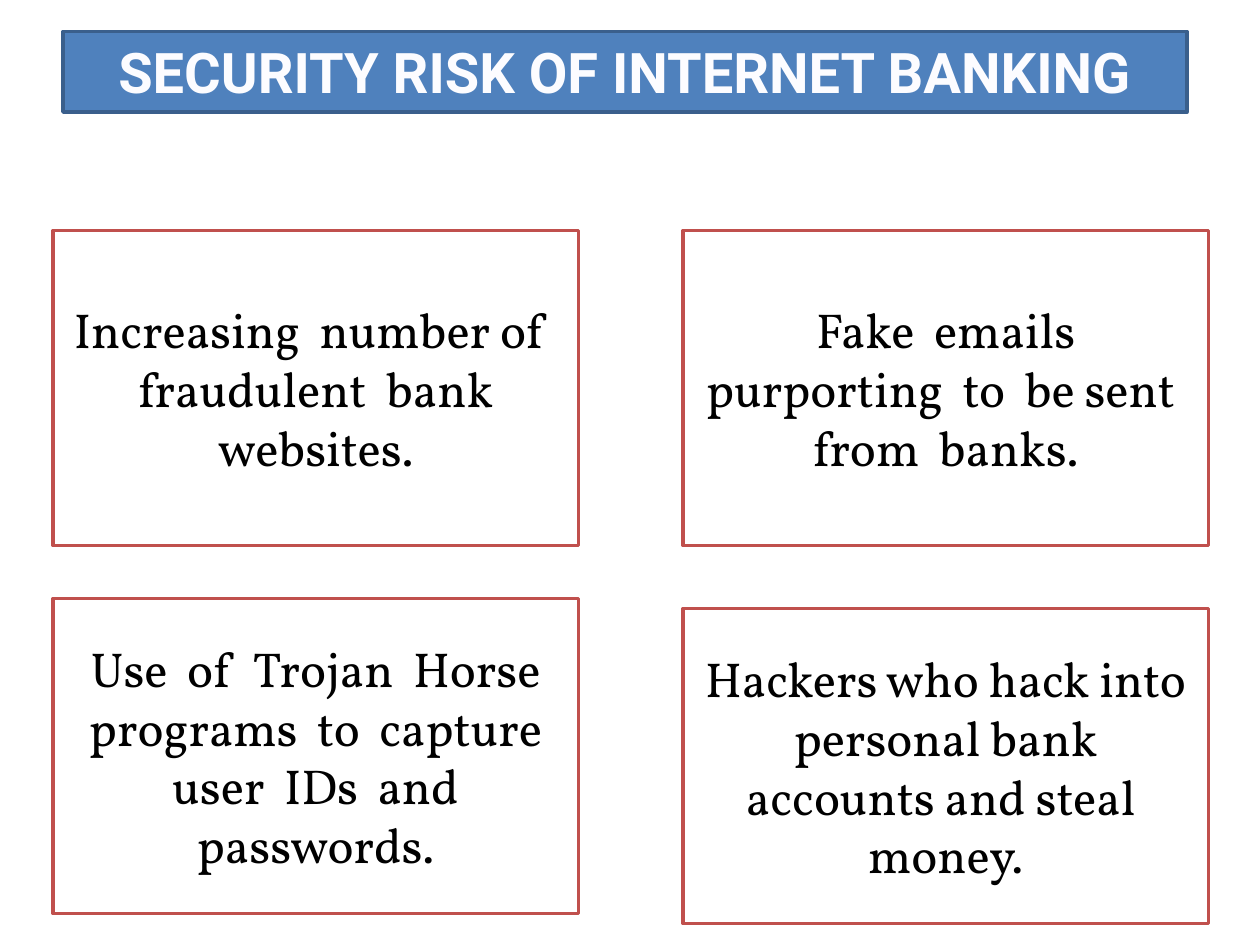
from pptx import Presentation
from pptx.dml.color import RGBColor
from pptx.enum.shapes import MSO_SHAPE
from pptx.enum.text import MSO_ANCHOR, MSO_AUTO_SIZE, PP_ALIGN
from pptx.util import Inches, Pt

RECT = MSO_SHAPE.RECTANGLE
TOP, MIDDLE = MSO_ANCHOR.TOP, MSO_ANCHOR.MIDDLE
CENTER = PP_ALIGN.CENTER
GROW = MSO_AUTO_SIZE.SHAPE_TO_FIT_TEXT

BLUE = RGBColor(0x4F, 0x81, 0xBD)
NAVY = RGBColor(0x3A, 0x5F, 0x8C)
RED = RGBColor(0xC0, 0x50, 0x4D)
WHITE = RGBColor(0xFF, 0xFF, 0xFF)
PALE = RGBColor(0xFC, 0xFC, 0xFF)
BLACK = RGBColor(0x00, 0x00, 0x00)

deck = Presentation()
deck.slide_width, deck.slide_height = Inches(10), Inches(7.5)
slide = deck.slides.add_slide(deck.slide_layouts[6])


def add_box(area, text, fill, edge, face, size, ink, anchor):
    box = slide.shapes.add_shape(RECT, *[Inches(n) for n in area])
    box.shadow.inherit = False
    box.fill.solid()
    box.fill.fore_color.rgb = fill
    box.line.color.rgb = edge
    box.line.width = Pt(2)
    frame = box.text_frame
    frame.word_wrap = True
    frame.vertical_anchor = anchor
    para = frame.paragraphs[0]
    para.text = text
    para.alignment = CENTER
    para.font.name = face
    para.font.size = Pt(size)
    para.font.color.rgb = ink
    return box


# Title banner
title = add_box((0.5, 0.25, 8.92, 0.64), "SECURITY RISK OF INTERNET BANKING",
                BLUE, NAVY, "Roboto", 32, PALE, TOP)
title.text_frame.auto_size = GROW
title.text_frame.paragraphs[0].font.bold = True

# Risk cards: two columns, the last card set slightly lower
LEFT, STEP = 0.42, 5
WIDE, HIGH = 4.17, 2.5
cards = [
    (0, 1.83, "Increasing  number of  fraudulent  bank websites."),
    (1, 1.83, "Fake  emails purporting  to  be sent  from  banks."),
    (0, 4.75, "Use  of  Trojan  Horse programs  to  capture user  IDs  and passwords."),
    (1, 4.83, "Hackers who hack into personal bank accounts and steal  money."),
]
for col, top, text in cards:
    add_box((LEFT + col * STEP, top, WIDE, HIGH), text,
            WHITE, RED, "Vollkorn", 28, BLACK, MIDDLE)

deck.save("out.pptx")
